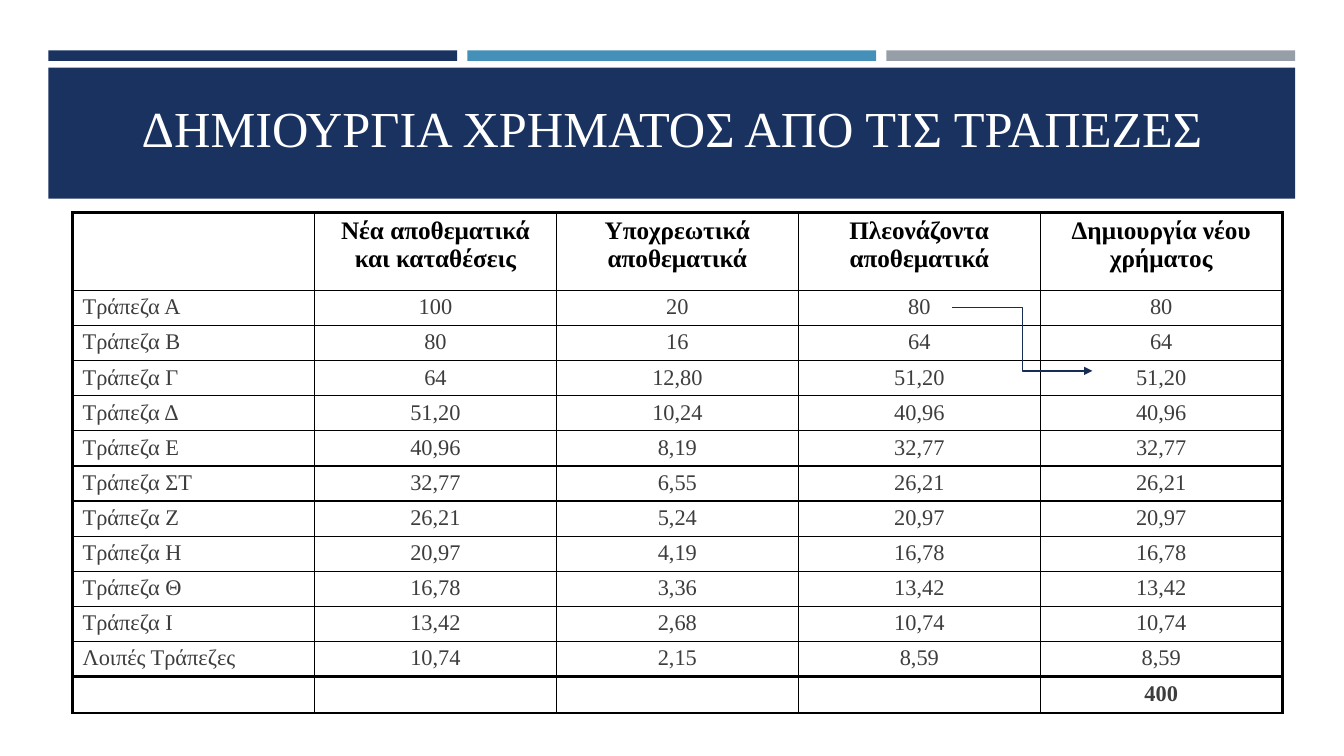
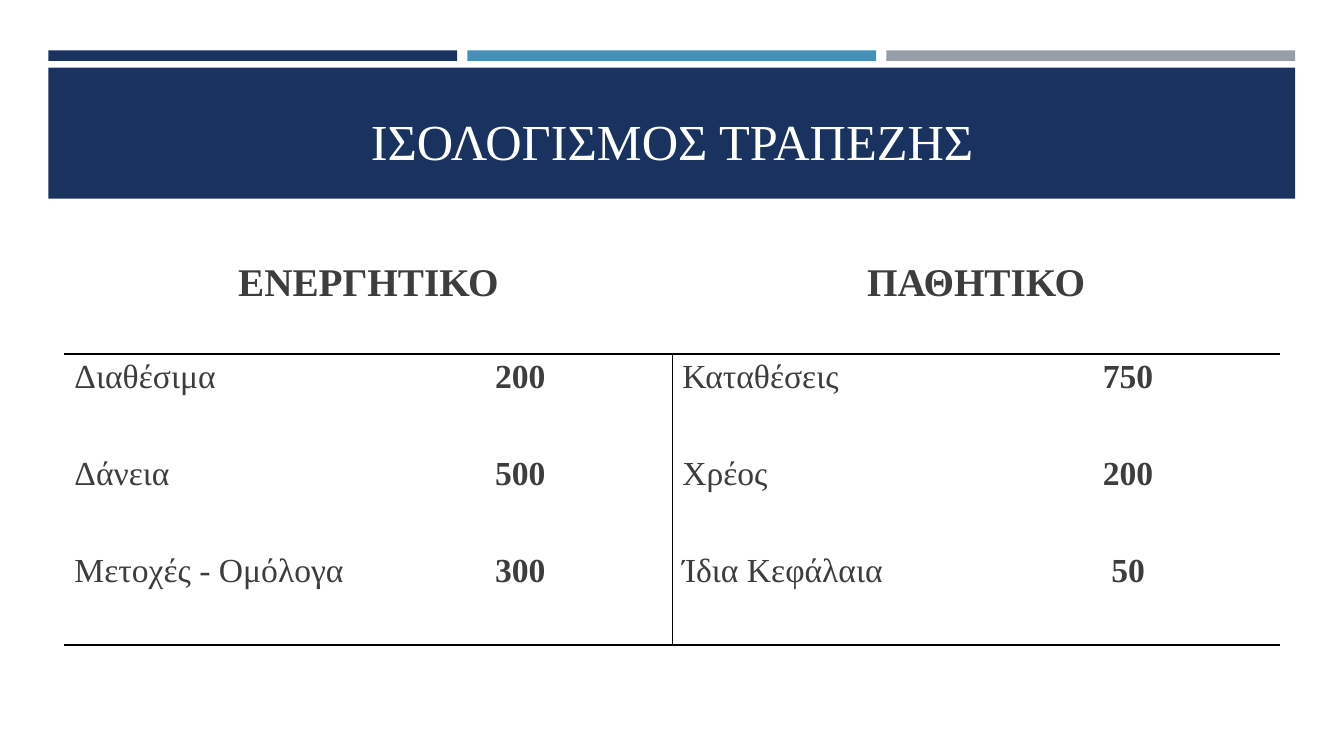
from dataclasses import dataclass

from pptx import Presentation
from pptx.dml.color import RGBColor
from pptx.enum import shapes, text
from pptx.oxml import parse_xml
from pptx.oxml.ns import nsdecls
from pptx.util import Pt


@dataclass(frozen=True)
class Theme:
    font: str = "Times New Roman"
    navy: str = "1A3260"
    blue: str = "4590B8"
    grey: str = "969FA7"
    arrow: str = "172D56"
    white: str = "FFFFFF"
    black: str = "000000"
    ink: str = "3D3D3D"
    title: int = 36
    side: int = 28
    entry: int = 24
    head: int = 18
    body: int = 16
    thin: float = 1
    thick: float = 2.25


T = Theme()
WIDE, HIGH = 960, 540
BANNER = (34.56, 48.24, 890.64, 93.6)
CENTER, LEFT = text.PP_ALIGN.CENTER, text.PP_ALIGN.LEFT

SUMS = "100 80 64 51,20 40,96 32,77 26,21 20,97 16,78 13,42 10,74 8,59".split()
KEPT = "20 16 12,80 10,24 8,19 6,55 5,24 4,19 3,36 2,68 2,15".split()
BANKS = [f"Τράπεζα {n}" for n in "Α Β Γ Δ Ε ΣΤ Ζ Η Θ Ι".split()] + ["Λοιπές Τράπεζες"]
HEADS = ["", "Νέα αποθεματικά\nκαι καταθέσεις", "Υποχρεωτικά αποθεματικά",
         "Πλεονάζοντα\nαποθεματικά", "Δημιουργία νέου χρήματος"]
SHEET = [["ΕΝΕΡΓΗΤΙΚΟ", "", "ΠΑΘΗΤΙΚΟ", ""],
         ["Διαθέσιμα", "200", "Καταθέσεις", "750"],
         ["Δάνεια", "500", "Χρέος", "200"],
         ["Μετοχές - Ομόλογα", "300", "Ίδια Κεφάλαια", "50"]]


def apply(item, **vals):
    for key, val in vals.items():
        setattr(item, key, val)


def style(frame, size, color, bold=False, align=CENTER):
    for para in frame.paragraphs:
        para.alignment = align
        para._p.get_or_add_endParaRPr().set("sz", str(size * 100))
        for run in para.runs:
            apply(run.font, name=T.font, size=Pt(size), bold=bold)
            run.font.color.rgb = RGBColor.from_string(color)


def add_bands(layout, slide):
    """Draw the bands on the slide, then move them to the back of its layout."""
    x, y, w, h = BANNER
    gap = 7.2
    part = (w - 2 * gap) / 3
    bands = [(x + n * (part + gap), 36, part, 7.5, color)
             for n, color in enumerate((T.navy, T.blue, T.grey))]
    bands.append((*BANNER, T.navy))
    for n, (*box, color) in enumerate(bands):
        band = slide.shapes.add_shape(shapes.MSO_SHAPE.RECTANGLE, *map(Pt, box))
        band.shadow.inherit = False
        band.fill.solid()
        band.fill.fore_color.rgb = RGBColor.from_string(color)
        band.line.fill.background()
        band._element.nvSpPr.cNvPr.set("id", str(50 + n))
        layout.shapes._spTree.insert(2 + n, band._element)


def add_title(slide, words, height):
    title = slide.shapes.title
    apply(title, left=Pt(46), top=Pt(55.44), width=Pt(868.32), height=Pt(height))
    frame = title.text_frame
    frame.text = words
    apply(frame, vertical_anchor=text.MSO_ANCHOR.BOTTOM, word_wrap=True,
          auto_size=text.MSO_AUTO_SIZE.NONE)
    style(frame, T.title, T.white)


def set_edges(cell, widths):
    """Set left, right, top and bottom borders; a width of 0 means none."""
    props = cell._tc.get_or_add_tcPr()
    for n, (side, width) in enumerate(zip("LRTB", widths)):
        paint = (f'<a:solidFill><a:srgbClr val="{T.black}"/></a:solidFill>'
                 if width else "<a:noFill/>")
        props.insert(n, parse_xml(
            f'<a:ln{side} {nsdecls("a")} w="{Pt(width)}">{paint}</a:ln{side}>'))


def add_grid(slide, box, rows, highs, look, across, down):
    """Add a table; look(r, c) gives text style, across(line) and down(line, r) border widths."""
    grid = slide.shapes.add_table(len(rows), len(rows[0]), *map(Pt, box)).table
    apply(grid, first_row=False, horz_banding=False)
    for row, high in zip(grid.rows, highs):
        row.height = Pt(high)
    for col in grid.columns:
        col.width = Pt(box[2] / len(rows[0]))
    for r, row in enumerate(rows):
        for c, words in enumerate(row):
            cell = grid.cell(r, c)
            cell.text = words
            apply(cell, margin_top=Pt(3.2), margin_bottom=Pt(3.2))
            style(cell.text_frame, **look(r, c))
            cell.fill.background()
            set_edges(cell, (down(c, r), down(c + 1, r), across(r), across(r + 1)))
    return grid


def add_arrow(slide, start, end):
    arrow = slide.shapes.add_connector(
        shapes.MSO_CONNECTOR.ELBOW, *map(Pt, (*start, *end)))
    arrow.line.width = Pt(T.thin)
    arrow.line.color.rgb = RGBColor.from_string(T.arrow)
    arrow.line._get_or_add_ln().append(
        parse_xml(f'<a:tailEnd {nsdecls("a")} type="triangle"/>'))
    arrow._element.spPr.append(parse_xml(f'<a:effectLst {nsdecls("a")}/>'))


def money_slide(slide):
    add_title(slide, "ΔΗΜΙΟΥΡΓΙΑ ΧΡΗΜΑΤΟΣ ΑΠΟ ΤΙΣ ΤΡΑΠΕΖΕΣ", 60.48)
    rows = [HEADS]
    rows += [[bank, got, kept, lent, lent]
             for bank, got, kept, lent in zip(BANKS, SUMS, KEPT, SUMS[1:])]
    rows.append([""] * 4 + ["400"])
    last = len(rows) - 1
    highs = [55.5] + [25.1] * last

    def look(r, c):
        if r == 0:
            return dict(size=T.head, color=T.black, bold=True)
        return dict(size=T.body, color=T.ink, bold=r == last,
                    align=CENTER if c else LEFT)

    x, y, w = 51.84, 151.92, 864
    add_grid(slide, (x, y, w, sum(highs)), rows, highs, look,
             lambda line: T.thick if line in (0, last, last + 1) else T.thin,
             lambda line, r: T.thick if line in (0, len(HEADS)) else T.thin)
    add_arrow(slide, (x + 628.5, y + 67.5), (x + 728.5, y + 113))


def balance_slide(slide):
    add_title(slide, "ΙΣΟΛΟΓΙΣΜΟΣ ΤΡΑΠΕΖΗΣ", 69.84)
    highs = [69.3] * len(SHEET)

    def look(r, c):
        return dict(size=T.entry if r else T.side, color=T.ink,
                    bold=r == 0 or c % 2 == 1,
                    align=LEFT if r and c % 2 == 0 else CENTER)

    grid = add_grid(slide, (46, 183.6, 868.32, sum(highs)), SHEET, highs, look,
                    lambda line: T.thin if line in (1, len(SHEET)) else 0,
                    lambda line, r: T.thin if r and line == 2 else 0)
    for c in (0, 2):
        grid.cell(0, c).merge(grid.cell(0, c + 1))


def main():
    deck = Presentation()
    apply(deck, slide_width=Pt(WIDE), slide_height=Pt(HIGH))
    layout = deck.slide_layouts[5]
    first, second = (deck.slides.add_slide(layout) for _ in range(2))
    add_bands(layout, first)
    money_slide(first)
    balance_slide(second)
    deck.save("out.pptx")


if __name__ == "__main__":
    main()
